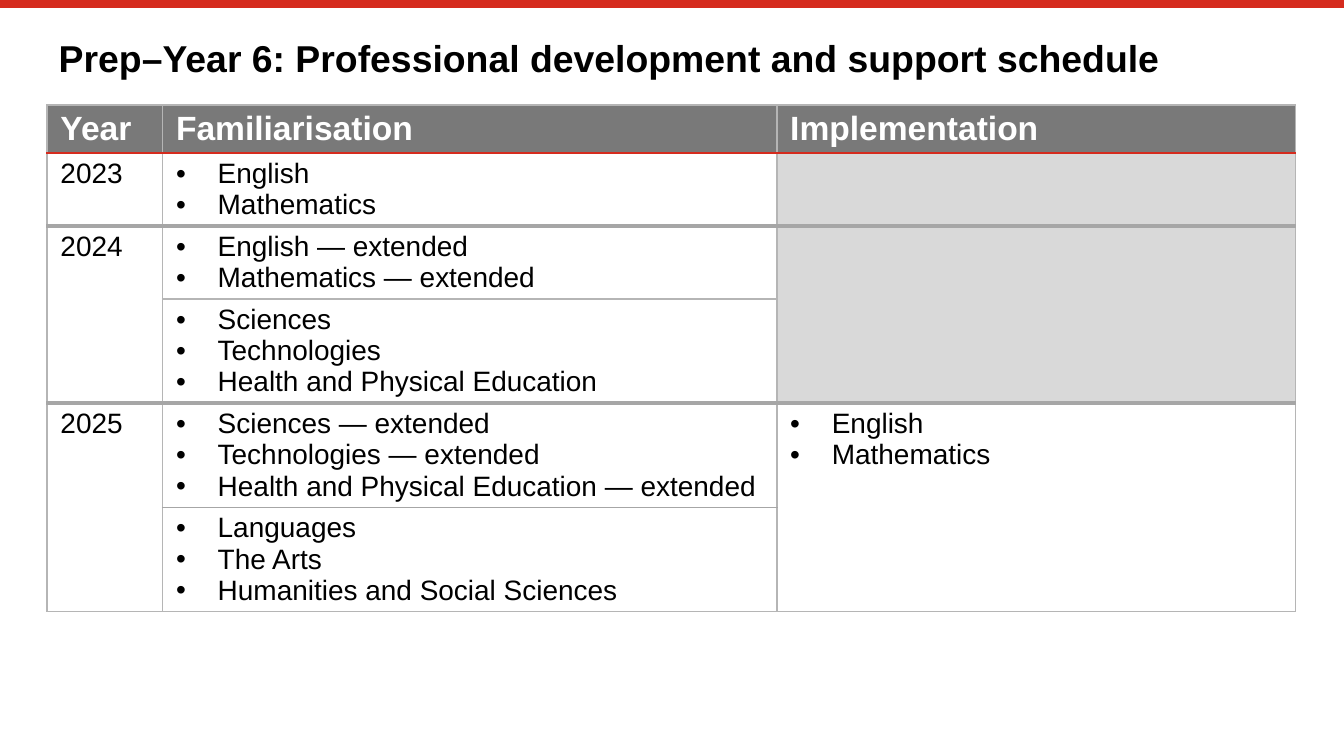
import pptx
import pptx.util
import pptx.dml.color
import pptx.enum.shapes
import pptx.enum.text
import pptx.oxml
import pptx.oxml.ns
from pptx.util import Inches

BLACK = pptx.dml.color.RGBColor(0x00, 0x00, 0x00)
WHITE = pptx.dml.color.RGBColor(0xFF, 0xFF, 0xFF)
RED = pptx.dml.color.RGBColor(0xD5, 0x2B, 0x1E)
HEADER_GREY = pptx.dml.color.RGBColor(0x79, 0x79, 0x79)
EMPTY_GREY = pptx.dml.color.RGBColor(0xD9, 0xD9, 0xD9)
GRID_GREY = pptx.dml.color.RGBColor(0xB5, 0xB5, 0xB5)
YEAR_GREY = pptx.dml.color.RGBColor(0xA6, 0xA6, 0xA6)

TITLE_FONT = {"name": "Arial", "size": pptx.util.Pt(20), "bold": True}
HEADER_FONT = {"name": "Arial", "size": pptx.util.Pt(18), "bold": True}
BODY_FONT = {"name": "Arial", "size": pptx.util.Pt(15), "bold": False}

GRID_LINE = (GRID_GREY, 1)
YEAR_LINE = (YEAR_GREY, 2.25)
ROW_LINES = [GRID_LINE, (RED, 1.5), YEAR_LINE, GRID_LINE, YEAR_LINE,
             (YEAR_GREY, 0.75), GRID_LINE]
COLUMN_WIDTHS = [0.86, 4.57, 3.86]
ROW_HEIGHTS = [0.32] + [0.3] * 5
YEAR_STARTS = [2, 4]

HEADINGS = ["Year", "Familiarisation", "Implementation"]
YEARS = {1: "2023", 2: "2024", 4: "2025"}
FAMILIARISATION = [
    ["English", "Mathematics"],
    ["English — extended", "Mathematics — extended"],
    ["Sciences", "Technologies", "Health and Physical Education"],
    ["Sciences — extended", "Technologies — extended",
     "Health and Physical Education — extended"],
    ["Languages", "The Arts", "Humanities and Social Sciences"],
]
IMPLEMENTATION = {4: ["English", "Mathematics"]}


def format_font(font, values, color):
    for name, value in values.items():
        setattr(font, name, value)
    font.color.rgb = color


def add_top_band(page, left, top, width):
    band = page.shapes.add_connector(
        pptx.enum.shapes.MSO_CONNECTOR.STRAIGHT,
        Inches(left), Inches(top), Inches(left + width), Inches(top))
    band.line.color.rgb = RED
    band.line.width = pptx.util.Pt(4.2)
    properties = band._element.spPr
    properties.append(properties.makeelement(pptx.oxml.ns.qn("a:effectLst"), {}))


def place_title(page, left, top, width, height):
    title = page.shapes.title
    title.left, title.top = Inches(left), Inches(top)
    title.width, title.height = Inches(width), Inches(height)
    frame = title.text_frame
    layout = {"margin_left": 0, "margin_top": 0, "margin_right": 0,
              "margin_bottom": 0, "word_wrap": True,
              "vertical_anchor": pptx.enum.text.MSO_ANCHOR.TOP,
              "auto_size": pptx.enum.text.MSO_AUTO_SIZE.NONE}
    for name, value in layout.items():
        setattr(frame, name, value)
    para = frame.paragraphs[0]
    para.text = " Prep–Year 6: Professional development and support schedule"
    para.alignment = pptx.enum.text.PP_ALIGN.LEFT
    para.line_spacing = 0.9
    format_font(para.font, TITLE_FONT, BLACK)


def set_border(cell, side, line):
    color, points = line
    cell._tc.get_or_add_tcPr().append(pptx.oxml.parse_xml(
        f'<a:ln{side} {pptx.oxml.ns.nsdecls("a")} w="{pptx.util.Pt(points)}">'
        f'<a:solidFill><a:srgbClr val="{color}"/></a:solidFill></a:ln{side}>'))


def add_bullet(para):
    properties = para._p.get_or_add_pPr()
    properties.set("marL", str(Inches(0.31)))
    properties.set("indent", str(Inches(-0.31)))
    properties.append(pptx.oxml.parse_xml(
        f'<a:buFont {pptx.oxml.ns.nsdecls("a")} typeface="Arial"/>'))
    properties.append(pptx.oxml.parse_xml(
        f'<a:buChar {pptx.oxml.ns.nsdecls("a")} char="•"/>'))


def fill_cell(cell, lines, font, color, bulleted):
    cell.margin_left = cell.margin_right = Inches(0.1)
    cell.margin_top = cell.margin_bottom = Inches(0.04)
    cell.text = "\n".join(lines)
    for para in cell.text_frame.paragraphs:
        if bulleted:
            add_bullet(para)
        format_font(para.font, font, color)


def cell_lines(row, column):
    if row == 0:
        return [HEADINGS[column]]
    if column == 0:
        return [YEARS[row]] if row in YEARS else []
    if column == 1:
        return FAMILIARISATION[row - 1]
    return IMPLEMENTATION.get(row, [])


def add_schedule(page, left, top, height):
    frame = page.shapes.add_table(
        len(ROW_HEIGHTS), len(COLUMN_WIDTHS), Inches(left), Inches(top),
        Inches(sum(COLUMN_WIDTHS)), Inches(height))
    table = frame.table
    table.first_row = table.horz_banding = False
    for column, width in zip(table.columns, COLUMN_WIDTHS):
        column.width = Inches(width)
    for row, row_height in zip(table.rows, ROW_HEIGHTS):
        row.height = Inches(row_height)
    frame.height = Inches(height)
    for start in YEAR_STARTS:
        for column in (0, 2):
            table.cell(start, column).merge(table.cell(start + 1, column))

    for row in range(len(ROW_HEIGHTS)):
        for column in range(len(COLUMN_WIDTHS)):
            cell = table.cell(row, column)
            lines = cell_lines(row, column)
            header = row == 0
            bottom = row + (cell.span_height if cell.is_merge_origin else 1)
            set_border(cell, "L", GRID_LINE)
            set_border(cell, "R", GRID_LINE)
            if not cell.is_spanned:
                set_border(cell, "T", ROW_LINES[row])
            set_border(cell, "B", ROW_LINES[bottom])
            if header:
                fill = HEADER_GREY
            elif column == 2 and row < 4:
                fill = EMPTY_GREY
            else:
                fill = WHITE
            cell.fill.solid()
            cell.fill.fore_color.rgb = fill
            fill_cell(cell, lines, HEADER_FONT if header else BODY_FONT,
                      WHITE if header else BLACK,
                      bulleted=bool(lines) and column > 0 and not header)


def main():
    deck = pptx.Presentation()
    deck.slide_width = Inches(10)
    deck.slide_height = deck.slide_width * 9 // 16
    page = deck.slides.add_slide(deck.slide_layouts.get_by_name("Title Only"))
    add_top_band(page, 0, 0.03, 10)
    place_title(page, 0.36, 0.3, 9.29, 0.39)
    add_schedule(page, 0.35, 0.78, 4)
    deck.save("out.pptx")


if __name__ == "__main__":
    main()
